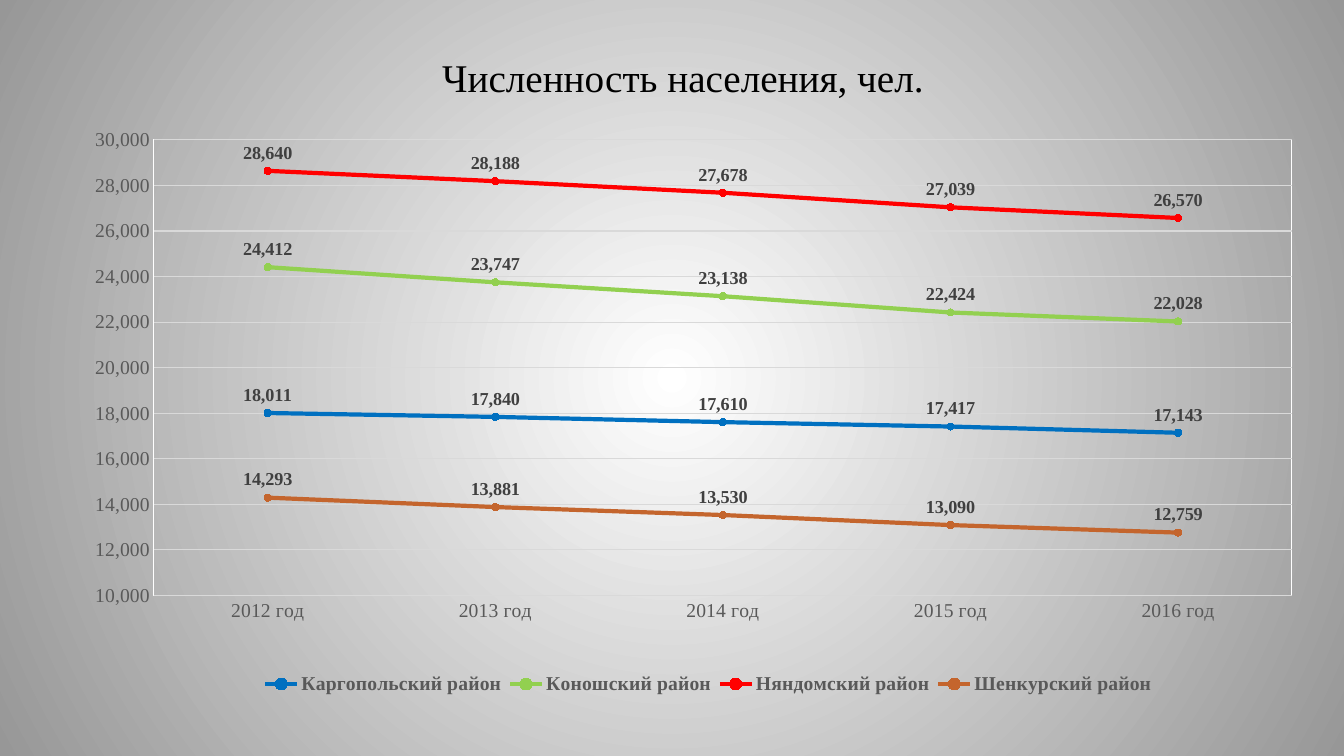
import pptx
import pptx.chart.data
import pptx.dml.color
import pptx.enum.chart
import pptx.enum.text
import pptx.oxml
import pptx.oxml.ns
import pptx.util
from pptx.util import Cm

FONT = "Times New Roman"
NUMBER_FORMAT = "#,##0"
YEARS = range(2012, 2017)
DISTRICTS = [
    ("Каргопольский район", "0070C0", (18011, 17840, 17610, 17417, 17143)),
    ("Коношский район", "92D050", (24412, 23747, 23138, 22424, 22028)),
    ("Няндомский район", "FF0000", (28640, 28188, 27678, 27039, 26570)),
    ("Шенкурский район", "C4652D", (14293, 13881, 13530, 13090, 12759)),
]
NAMESPACES = pptx.oxml.ns.nsdecls("a", "c")
color = pptx.dml.color.RGBColor.from_string


def style_text(font, text=None, size=14, fill="595959", bold=False):
    if text is not None:
        span = font.add_run()
        span.text = text
        font = span.font
    font.name = FONT
    font.size = pptx.util.Pt(size)
    font.bold = bold
    font.color.rgb = color(fill)


def place_layout(parent, index, x, y, width, height, target=""):
    for old in parent.findall(pptx.oxml.ns.qn("c:layout")):
        parent.remove(old)
    parent.insert(index, pptx.oxml.parse_xml(
        f'<c:layout {NAMESPACES}><c:manualLayout>{target}'
        '<c:xMode val="edge"/><c:yMode val="edge"/>'
        f'<c:x val="{x}"/><c:y val="{y}"/><c:w val="{width}"/><c:h val="{height}"/>'
        '</c:manualLayout></c:layout>'))


deck = pptx.Presentation()
deck.slide_width, deck.slide_height = Cm(33.87), Cm(19.05)
page = deck.slides.add_slide(deck.slide_layouts[6])

backdrop = page.background.fill
backdrop.gradient()
for stop, shade in zip(backdrop.gradient_stops, ("FFFFFF", "979797")):
    stop.color.rgb = color(shade)
linear = page.background._cSld.find(".//" + pptx.oxml.ns.qn("a:lin"))
linear.getparent().replace(linear, pptx.oxml.parse_xml(
    f'<a:path {NAMESPACES} path="circle">'
    '<a:fillToRect l="50000" t="50000" r="50000" b="50000"/></a:path>'))

title = page.shapes.add_textbox(Cm(1.73), Cm(0.74), Cm(30.96), Cm(2.39))
title.text_frame.word_wrap = True
title.text_frame.vertical_anchor = pptx.enum.text.MSO_ANCHOR.MIDDLE
para = title.text_frame.paragraphs[0]
para.alignment = pptx.enum.text.PP_ALIGN.CENTER
style_text(para, "Численность населения, чел.", size=28, fill="000000")

data = pptx.chart.data.CategoryChartData(number_format=NUMBER_FORMAT)
data.categories = [f"{year} год" for year in YEARS]
for name, shade, values in DISTRICTS:
    data.add_series(name, values)
chart = page.shapes.add_chart(
    pptx.enum.chart.XL_CHART_TYPE.LINE_MARKERS,
    Cm(1.73), Cm(3.12), Cm(31.62), Cm(15.6), data).chart
chart.has_title = False
chart.font.name = "Calibri"
chart.font.size = pptx.util.Pt(10)
chart.plots[0].vary_by_categories = False

for series, (name, shade, values) in zip(chart.plots[0].series, DISTRICTS):
    series.smooth = False
    series.format.line.color.rgb = color(shade)
    series.format.line.width = pptx.util.Pt(3)
    series.marker.style = pptx.enum.chart.XL_MARKER_STYLE.CIRCLE
    series.marker.size = 5
    series.marker.format.fill.solid()
    series.marker.format.fill.fore_color.rgb = color(shade)
    series.marker.format.line.color.rgb = color(shade)
    labels = series.data_labels
    labels.show_value = True
    labels.position = pptx.enum.chart.XL_LABEL_POSITION.ABOVE
    labels.number_format = NUMBER_FORMAT
    labels.number_format_is_linked = False
    style_text(labels.font, size=13, fill="404040", bold=True)

years, people = chart.category_axis, chart.value_axis
for axis in (years, people):
    axis.major_tick_mark = pptx.enum.chart.XL_TICK_MARK.NONE
    axis.minor_tick_mark = pptx.enum.chart.XL_TICK_MARK.NONE
    style_text(axis.tick_labels.font)
people.minimum_scale, people.maximum_scale, people.major_unit = 10000, 30000, 2000
people.tick_labels.number_format = NUMBER_FORMAT
people.tick_labels.number_format_is_linked = False
people.format.line.fill.background()
for line in (years.format.line, people.major_gridlines.format.line):
    line.color.rgb = color("D9D9D9")
    line.width = pptx.util.Pt(0.75)

chart.has_legend = True
chart.legend.position = pptx.enum.chart.XL_LEGEND_POSITION.BOTTOM
chart.legend.include_in_layout = False
style_text(chart.legend.font, bold=True)
place_layout(chart.legend._element, 1, 0.15, 0.88, 0.72, 0.05)

plot_area = chart._chartSpace.chart.plotArea
place_layout(plot_area, 0, 0.068, 0.026, 0.907, 0.736,
             '<c:layoutTarget val="inner"/>')
plot_area.append(pptx.oxml.parse_xml(
    f'<c:spPr {NAMESPACES}><a:noFill/><a:ln w="9525"><a:solidFill>'
    '<a:srgbClr val="FFFFFF"/></a:solidFill></a:ln></c:spPr>'))

deck.save("out.pptx")
